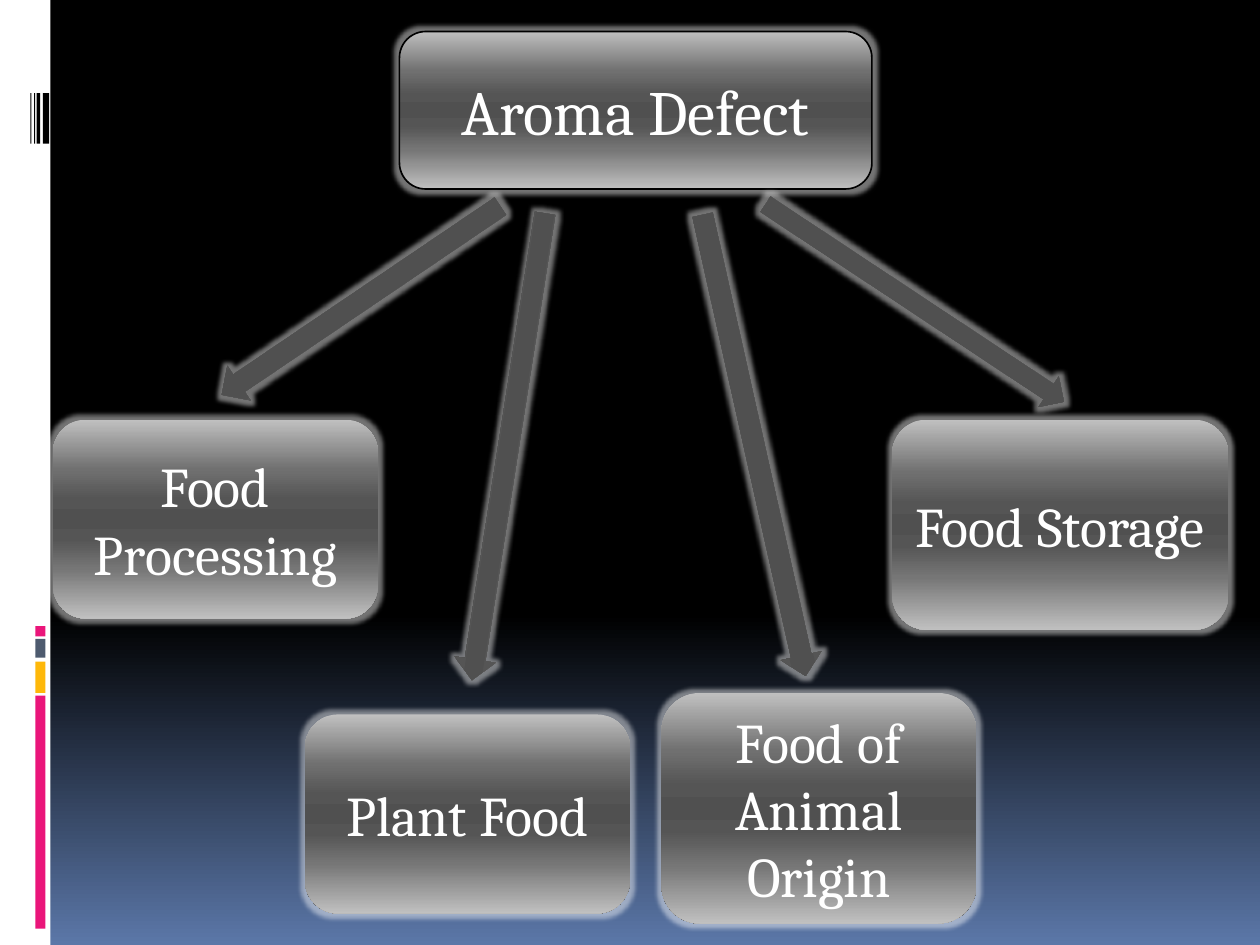
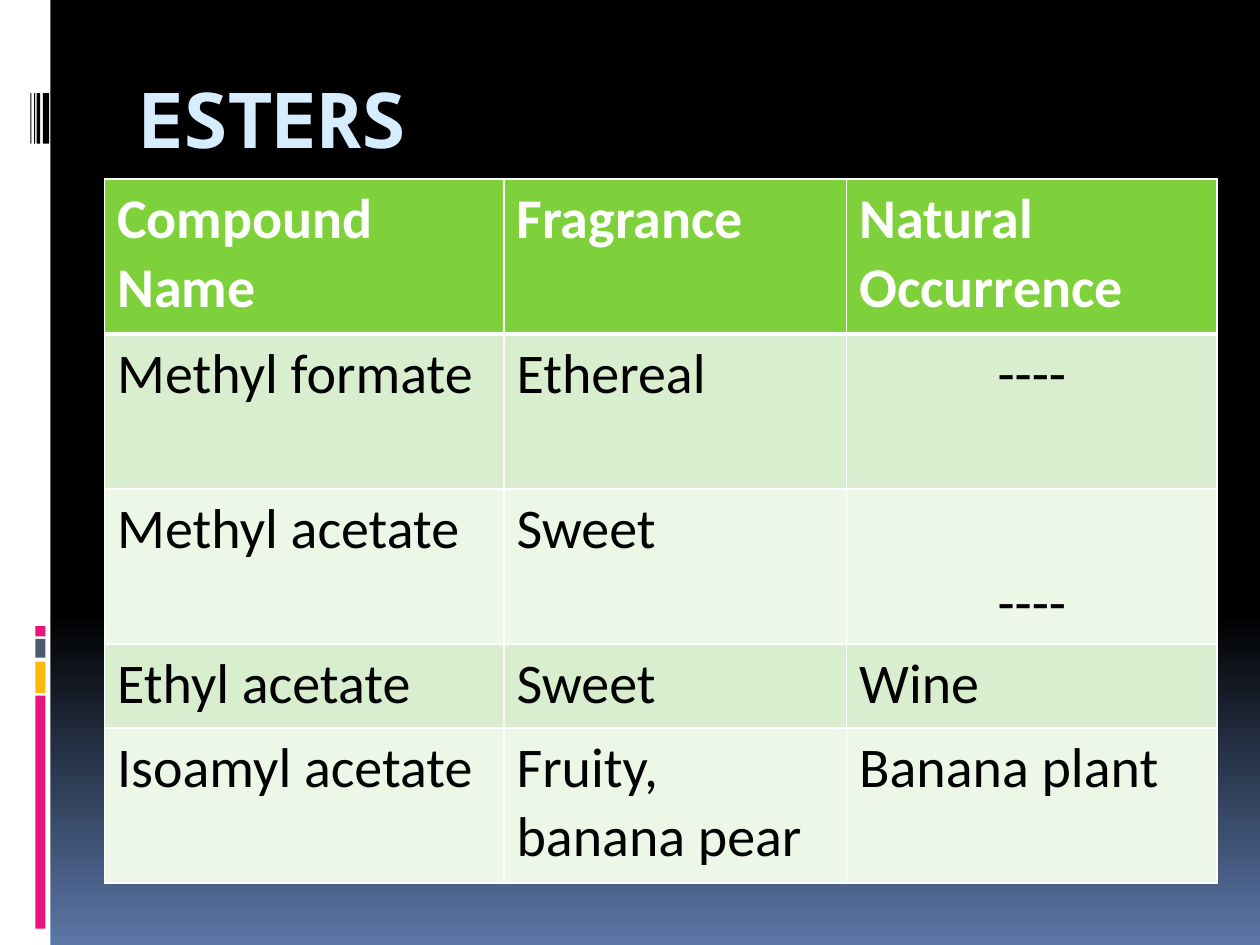
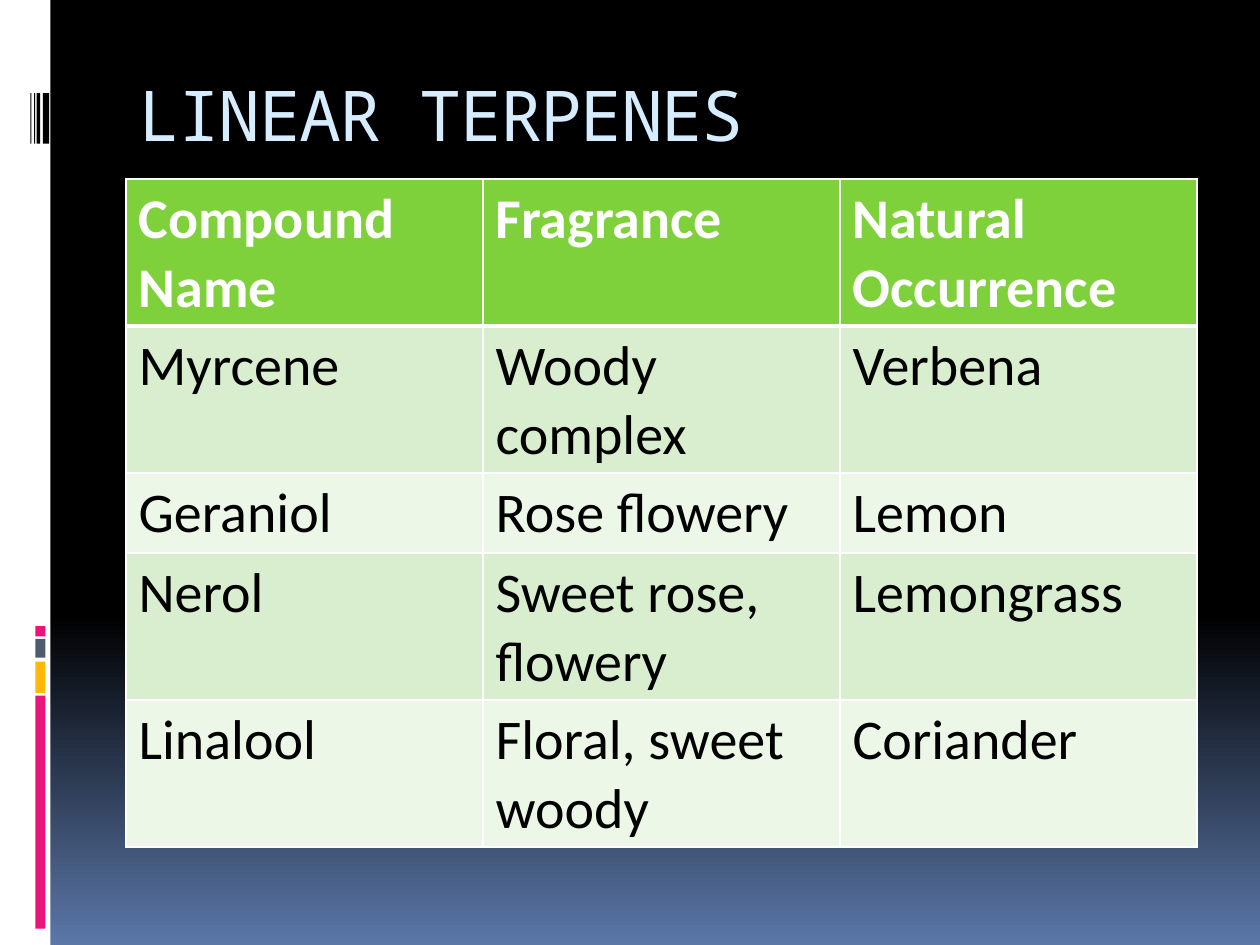
from lxml import etree
from pptx import Presentation, util as u
from pptx.dml.color import RGBColor
from pptx.enum import shapes, text
from pptx.oxml import ns

INK = {"black": "000000", "white": "FFFFFF", "pink": "EA157A", "gold": "FEB80A",
       "slate": "4E5B6F", "title": "D6ECFF", "head": "7FD13B",
       "odd": "D8EECE", "even": "ECF7E8"}
NIGHT = [(0, "000000"), (65, "000000"), (100, "5B77A8")]
STEEL = [(0, "C0C0C0"), (25, "707070"), (40, "555555"), (50, "505050"),
         (60, "555555"), (75, "767676"), (100, "C0C0C0")]
FORMS = {
    "title": {"name": "Noto Sans Mono", "size": u.Pt(40), "bold": False},
    "loud": {"name": "Noto Sans Mono", "size": u.Pt(44), "bold": True},
    "top": {"name": "Cambria", "size": u.Pt(36)},
    "box": {"name": "Cambria", "size": u.Pt(32)},
    "head": {"name": "Calibri", "size": u.Pt(32), "bold": True},
    "cell": {"name": "Calibri", "size": u.Pt(32), "bold": False},
}
KIND = shapes.MSO_SHAPE
MID = text.PP_ALIGN.CENTER

# Side band: left, top, width, height, colour
BAND = [(0, 0, 0.4, 7.5, "white"), (0.28, 5.52, 0.08, 1.85, "pink"),
        (0.28, 5.25, 0.08, 0.25, "gold"), (0.28, 5.07, 0.08, 0.15, "slate"),
        (0.28, 4.97, 0.08, 0.08, "pink")]
BAND += [(left, 0.74, wide, 0.4, "black")
         for left, wide in ((0.34, 0.05), (0.29, 0.03), (0.27, 0.01), (0.24, 0.01))]


def put(item, values):
    for key, value in values.items():
        setattr(item, key, value)


def child(parent, tag, **values):
    return etree.SubElement(parent, ns.qn(tag), values)


def tint(color, name):
    color.rgb = RGBColor.from_string(INK[name])


def blend(fill, root, stops):
    """Fill with a top-to-bottom gradient."""
    fill.gradient()
    fill.gradient_angle = 270
    marks = next(root.iter(ns.qn("a:gsLst")))
    marks.clear()
    for place, shade in stops:
        stop = child(marks, "a:gs", pos=str(place * 1000))
        child(stop, "a:srgbClr", val=shade)


class Deck:
    def __init__(self):
        self.file = Presentation()
        put(self.file, {"slide_width": u.Inches(10), "slide_height": u.Inches(7.5)})
        self.slide = None

    def page(self):
        self.slide = self.file.slides.add_slide(self.file.slide_layouts[6])
        blend(self.slide.background.fill, self.slide.element, NIGHT)
        for *area, color in BAND:
            bar = self.shape(KIND.RECTANGLE, area)
            bar.fill.solid()
            tint(bar.fill.fore_color, color)

    def shape(self, kind, area):
        item = self.slide.shapes.add_shape(kind, *map(u.Inches, area))
        item.shadow.inherit = False
        item.line.fill.background()
        return item

    def words(self, frame, words, form, color, align=None):
        line = frame.paragraphs[0]
        line.alignment = align
        run = line.add_run()
        run.text = words
        put(run.font, FORMS[form])
        tint(run.font.color, color)
        return run

    def title(self, words, form="title"):
        frame = self.slide.shapes.add_textbox(
            *map(u.Inches, (1, 0.56, 8.5, 1))).text_frame
        put(frame, {"word_wrap": True, "margin_top": u.Inches(0.01)})
        run = self.words(frame, words, form, "title")
        run._r.get_or_add_rPr().set("spc", "-100")

    def steel(self, kind, area):
        """A glowing metal shape."""
        item = self.shape(kind, area)
        blend(item.fill, item.element, STEEL)
        halo = next(item.element.iter(ns.qn("a:effectLst")))
        glow = child(halo, "a:glow", rad=str(u.Pt(5)))
        shade = child(glow, "a:srgbClr", val=INK["white"])
        child(shade, "a:alpha", val="45000")
        return item

    def box(self, words, area, form="box"):
        item = self.steel(KIND.ROUNDED_RECTANGLE, area)
        put(item.text_frame, {"word_wrap": True,
                              "vertical_anchor": text.MSO_ANCHOR.MIDDLE})
        self.words(item.text_frame, words, form, "white", MID)
        return item

    def arrow(self, area, turn):
        self.steel(KIND.RIGHT_ARROW, area).rotation = turn

    def edge(self, cell, row):
        """White cell rules, thick below the header."""
        for side in "LRTB":
            thick = (row, side) in ((0, "B"), (1, "T"))
            rule = child(cell._tc.get_or_add_tcPr(), "a:ln" + side,
                         w=str(u.Pt(3 if thick else 1)))
            child(child(rule, "a:solidFill"), "a:srgbClr", val=INK["white"])

    def table(self, area, wide, tall, rows):
        rows = [("Compound Name", "Fragrance", "Natural Occurrence")] + rows
        frame = self.slide.shapes.add_table(
            len(rows), len(wide), *map(u.Inches, area))
        grid = frame.table
        for col, size in zip(grid.columns, wide):
            col.width = u.Inches(size)
        for row, size in zip(grid.rows, tall):
            row.height = u.Inches(size)
        frame.height = u.Inches(area[3])
        for r, row in enumerate(rows):
            back = "head" if r == 0 else "odd" if r % 2 else "even"
            form, color = ("cell", "black") if r else ("head", "white")
            for c, words in enumerate(row):
                cell = grid.cell(r, c)
                self.edge(cell, r)
                cell.fill.solid()
                tint(cell.fill.fore_color, back)
                self.words(cell.text_frame, words, form, color,
                           MID if words == "----" else None)
        return grid


def main():
    deck = Deck()

    # Aroma defect tree
    deck.page()
    root = deck.box("Aroma Defect", (3.17, 0.25, 3.75, 1.25), "top")
    root.line.width = u.Pt(0.94)
    root.line.fill.solid()
    tint(root.line.color, "black")
    for words, area in (("Food Processing", (0.42, 3.33, 2.58, 1.58)),
                        ("Food Storage", (7.08, 3.33, 2.67, 1.67)),
                        ("Plant Food", (2.42, 5.67, 2.58, 1.58)),
                        ("Food of Animal Origin", (5.25, 5.5, 2.5, 1.83))):
        deck.box(words, area)
    for area, turn in (((5.84, 2.26, 2.84, 0.29), 33.5),
                       ((4.11, 3.37, 3.75, 0.33), 77.4),
                       ((2.16, 3.38, 3.75, 0.33), 98.9),
                       ((1.53, 2.22, 2.67, 0.33), 145.9)):
        deck.arrow(area, turn)

    # Esters
    deck.page()
    deck.title("ESTERS", "loud")
    grid = deck.table((0.83, 1.42, 8.83, 5.58), (3.17, 2.72, 2.94),
                      (1.23, 1.23, 1.23, 0.67, 1.23), [
        ("Methyl formate", "Ethereal", "----"),
        ("Methyl acetate", "Sweet", "----"),
        ("Ethyl acetate", "Sweet", "Wine"),
        ("Isoamyl acetate", "Fruity, banana pear", "Banana plant")])
    grid.cell(2, 2).vertical_anchor = text.MSO_ANCHOR.BOTTOM

    # Linear terpenes
    deck.page()
    deck.title("LINEAR TERPENES")
    deck.table((1, 1.42, 8.5, 5.3), [8.5 / 3] * 3, [0.41] * 5, [
        ("Myrcene", "Woody complex", "Verbena"),
        ("Geraniol", "Rose flowery", "Lemon"),
        ("Nerol", "Sweet rose, flowery", "Lemongrass"),
        ("Linalool", "Floral, sweet woody", "Coriander")])

    deck.file.save("out.pptx")


if __name__ == "__main__":
    main()
